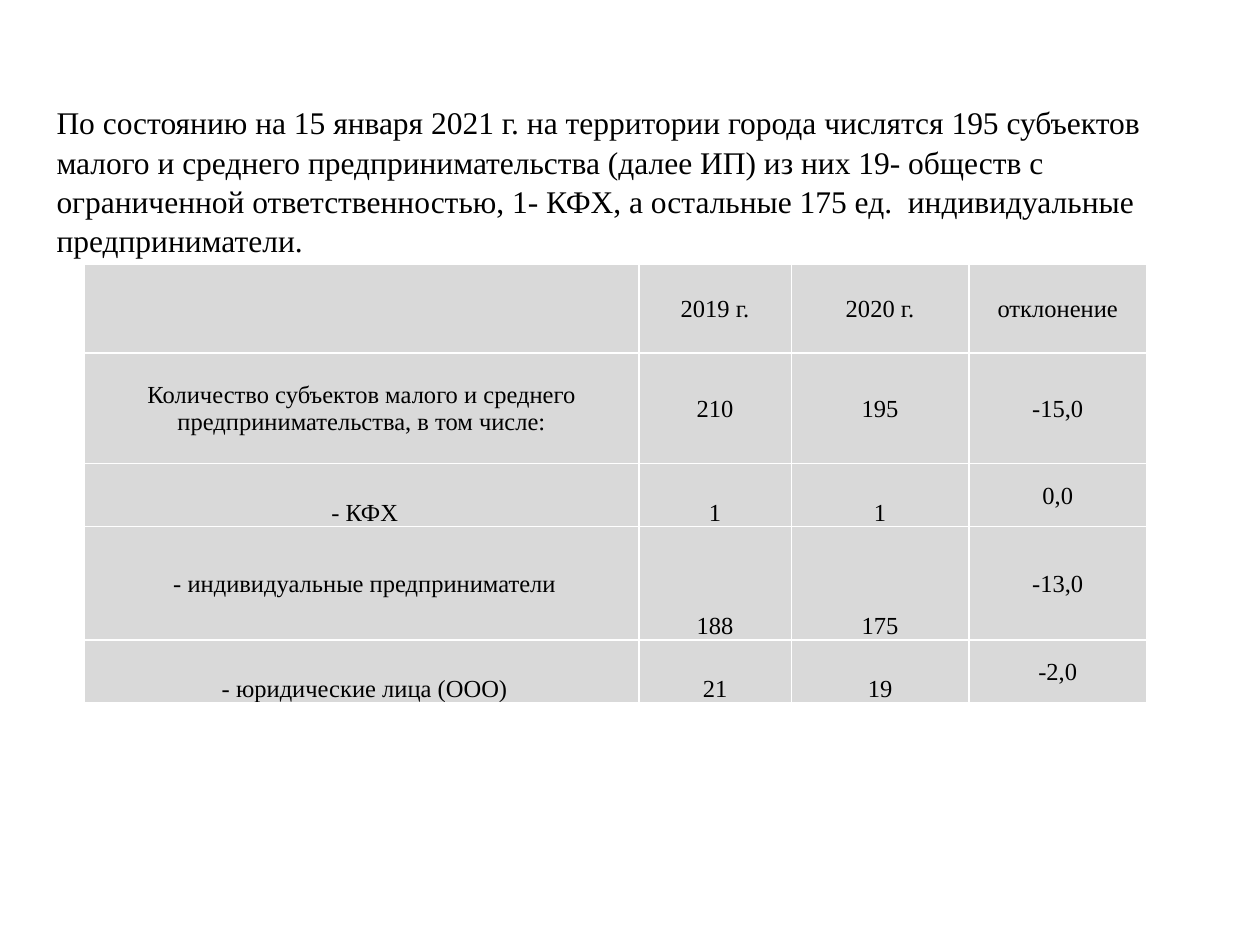
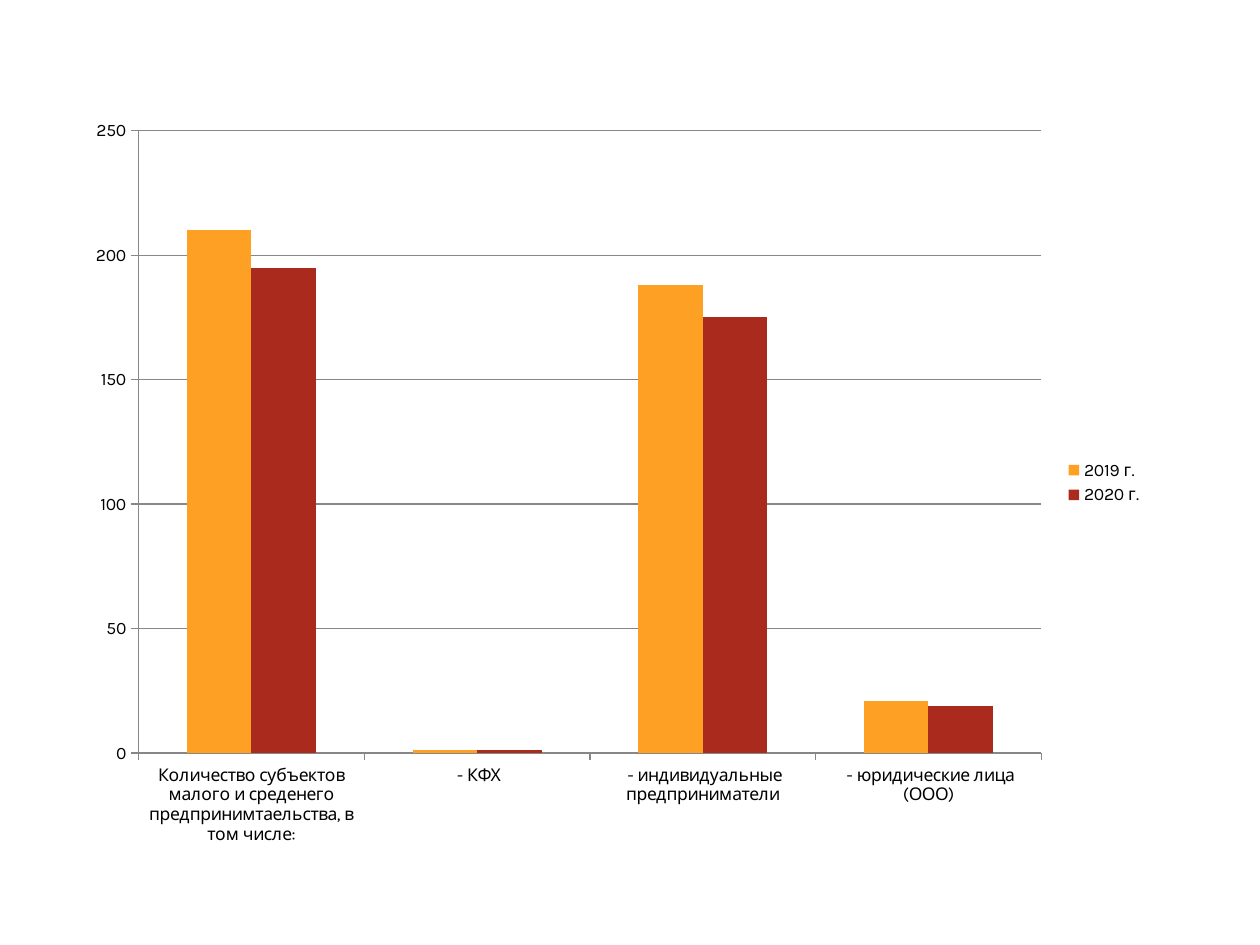
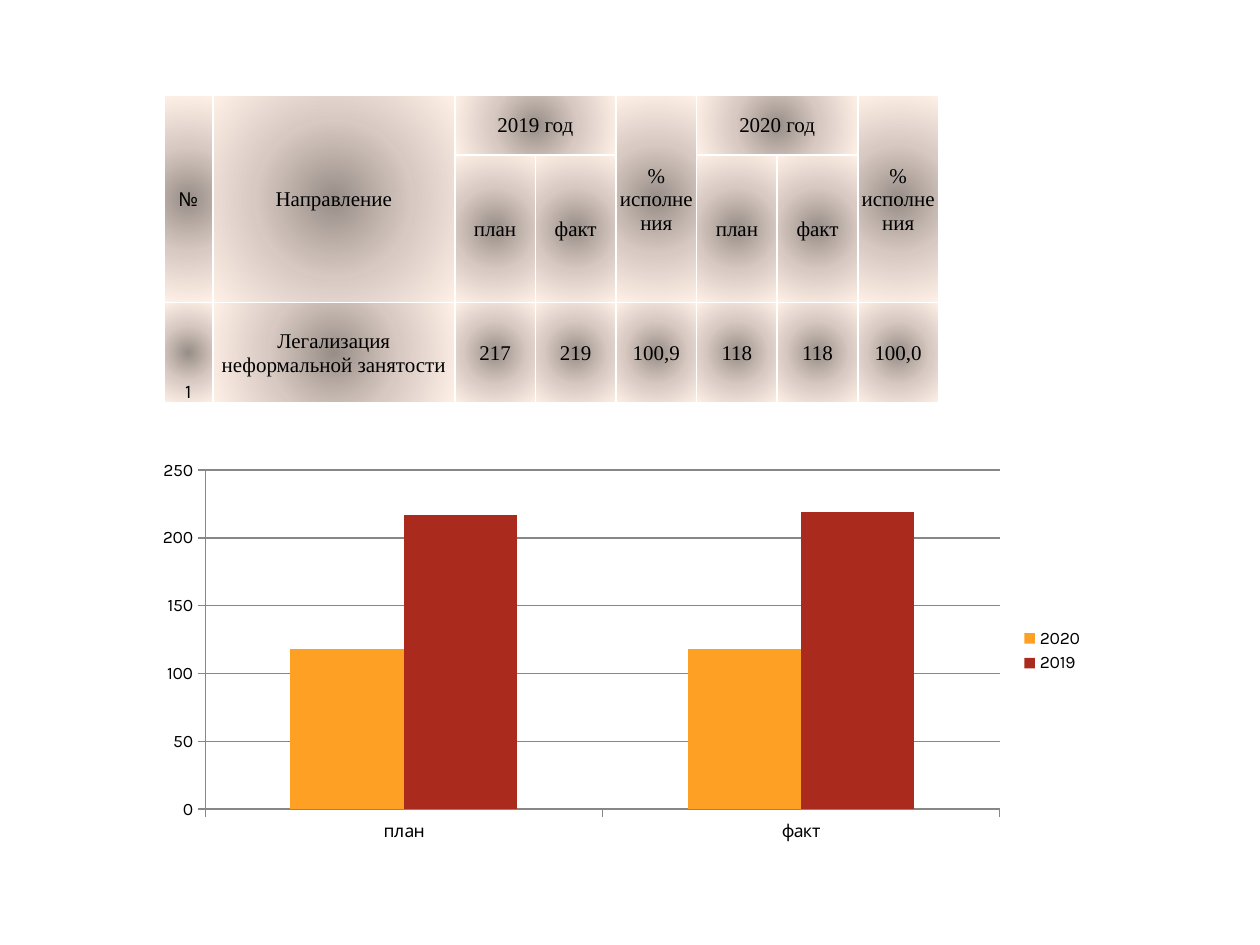
from dataclasses import dataclass
from typing import Callable, NamedTuple, Optional

from lxml import etree
from pptx import Presentation
from pptx.chart.data import CategoryChartData
from pptx.dml.color import RGBColor
from pptx.enum.chart import XL_CHART_TYPE, XL_LEGEND_POSITION, XL_TICK_MARK
from pptx.enum.text import MSO_ANCHOR, PP_ALIGN
from pptx.oxml import parse_xml
from pptx.oxml.ns import nsdecls
from pptx.util import Inches, Pt

COLUMNS = XL_CHART_TYPE.COLUMN_CLUSTERED
LEGEND_RIGHT = XL_LEGEND_POSITION.RIGHT
TICK_OUTSIDE, TICK_NONE = XL_TICK_MARK.OUTSIDE, XL_TICK_MARK.NONE
MIDDLE, BOTTOM = MSO_ANCHOR.MIDDLE, MSO_ANCHOR.BOTTOM
CENTER = PP_ALIGN.CENTER


@dataclass(frozen=True)
class Theme:
    text: RGBColor = RGBColor(0x00, 0x00, 0x00)
    cell: RGBColor = RGBColor(0xD9, 0xD9, 0xD9)
    axis: RGBColor = RGBColor(0x87, 0x87, 0x87)
    series: tuple = (RGBColor(0xFD, 0xA0, 0x23), RGBColor(0xAA, 0x2B, 0x1E))
    border: str = "FFFFFF"
    glow: tuple = ((0, "988E88"), (50, "D8CAC2"), (100, "FFF0E7"))
    serif: str = "Times New Roman"
    sans: str = "Karla"
    intro_size: int = 18
    count_size: int = 14
    plan_size: int = 12
    number_size: int = 11
    chart_size: int = 10


THEME = Theme()


class Box(NamedTuple):
    left: float
    top: float
    width: float
    height: float

    def lengths(self) -> list:
        return [Inches(value) for value in self]


class Cell(NamedTuple):
    text: str
    anchor: MSO_ANCHOR = MIDDLE
    rows: int = 1
    columns: int = 1
    font: str = THEME.serif
    size: Optional[int] = None


@dataclass(frozen=True)
class Grid:
    box: Box
    widths: list
    heights: list
    rows: list
    size: int
    fill: Callable


@dataclass(frozen=True)
class Columns:
    box: Box
    categories: list
    series: dict


def style_font(font, name: str, size: int) -> None:
    formats = {"name": name, "size": Pt(size)}
    for attribute, value in formats.items():
        setattr(font, attribute, value)
    font.color.rgb = THEME.text


def fill_flat(cell) -> None:
    cell.fill.solid()
    cell.fill.fore_color.rgb = THEME.cell


def fill_glow(cell) -> None:
    """Fill with a circular gradient, darkest at the centre."""
    stops = "".join(
        f'<a:gs pos="{position * 1000}"><a:srgbClr val="{color}"/></a:gs>'
        for position, color in THEME.glow
    )
    cell._tc.get_or_add_tcPr().append(parse_xml(
        f'<a:gradFill {nsdecls("a")}><a:gsLst>{stops}</a:gsLst><a:path path="circle">'
        '<a:fillToRect l="50000" t="50000" r="50000" b="50000"/></a:path></a:gradFill>'
    ))


def add_borders(cell) -> None:
    properties = cell._tc.get_or_add_tcPr()
    for side in ("lnL", "lnR", "lnT", "lnB"):
        line = etree.SubElement(properties, f"{{{properties.nsmap['a']}}}{side}", w=str(Pt(1)))
        line.append(parse_xml(
            f'<a:solidFill {nsdecls("a")}><a:srgbClr val="{THEME.border}"/></a:solidFill>'
        ))


def write_cell(cell, content: Cell, default_size: int) -> None:
    formats = {
        "margin_left": Inches(0.01),
        "margin_right": Inches(0.01),
        "margin_top": Inches(0.01),
        "margin_bottom": 0,
        "vertical_anchor": content.anchor,
    }
    for attribute, value in formats.items():
        setattr(cell, attribute, value)
    if content.text:
        paragraph = cell.text_frame.paragraphs[0]
        paragraph.alignment = CENTER
        run = paragraph.add_run()
        run.text = content.text
        style_font(run.font, content.font, content.size or default_size)


def draw_grid(slide, grid: Grid) -> None:
    table = slide.shapes.add_table(
        len(grid.heights), len(grid.widths), *grid.box.lengths()
    ).table
    table.first_row = table.horz_banding = False
    for column, width in zip(table.columns, grid.widths):
        column.width = Inches(width)
    for row, height in zip(table.rows, grid.heights):
        row.height = Inches(height)
    for r, contents in enumerate(grid.rows):
        for c, content in enumerate(contents):
            cell = table.cell(r, c)
            add_borders(cell)
            grid.fill(cell)
            if content is None:
                continue
            write_cell(cell, content, grid.size)
            if content.rows > 1 or content.columns > 1:
                cell.merge(table.cell(r + content.rows - 1, c + content.columns - 1))


def draw_columns(slide, columns: Columns) -> None:
    data = CategoryChartData()
    data.categories = columns.categories
    for name, values in columns.series.items():
        data.add_series(name, values)
    chart = slide.shapes.add_chart(COLUMNS, *columns.box.lengths(), data).chart
    style_font(chart.font, THEME.sans, THEME.chart_size)
    chart.has_title = False
    chart.has_legend = True
    chart.legend.position = LEGEND_RIGHT
    chart.legend.include_in_layout = False
    for axis in (chart.category_axis, chart.value_axis):
        axis.major_tick_mark = TICK_OUTSIDE
        axis.minor_tick_mark = TICK_NONE
        axis.format.line.color.rgb = THEME.axis
    chart.value_axis.has_major_gridlines = True
    chart.value_axis.major_gridlines.format.line.color.rgb = THEME.axis
    plot = chart.plots[0]
    plot.gap_width = 150
    plot.vary_by_categories = False
    for series, color in zip(plot.series, THEME.series):
        series.format.fill.solid()
        series.format.fill.fore_color.rgb = color


def draw_intro(slide, text: str, box: Box) -> None:
    frame = slide.shapes.add_textbox(*box.lengths()).text_frame
    frame.word_wrap = True
    paragraph = frame.paragraphs[0]
    paragraph.line_spacing = 1.04
    run = paragraph.add_run()
    run.text = text
    style_font(run.font, THEME.serif, THEME.intro_size)


INTRO = (
    "По состоянию на 15 января 2021 г. на территории города числятся 195 субъектов "
    "малого и среднего предпринимательства (далее ИП) из них 19- обществ с "
    "ограниченной ответственностью, 1- КФХ, а остальные 175 ед.  индивидуальные "
    "предприниматели."
)

FARMS, SOLE_TRADERS, COMPANIES = (
    " - КФХ", " - индивидуальные предприниматели", " - юридические лица (ООО)"
)


def count_row(label: str, before: str, after: str, change: str,
              label_anchor: MSO_ANCHOR = BOTTOM, count_anchor: MSO_ANCHOR = BOTTOM) -> list:
    return [Cell(label, label_anchor), Cell(before, count_anchor),
            Cell(after, count_anchor), Cell(change)]


BUSINESS_COUNTS = Grid(
    box=Box(0.67, 2.1, 8.43, 3.48),
    widths=[4.4, 1.21, 1.41, 1.41],
    heights=[0.7, 0.88, 0.5, 0.9, 0.5],
    rows=[
        count_row("", "2019 г.", "2020 г.", "отклонение", MIDDLE, MIDDLE),
        count_row("Количество субъектов малого и среднего предпринимательства, в том числе:",
                  "210", "195", "-15,0", MIDDLE, MIDDLE),
        count_row(FARMS, "1", "1", "0,0"),
        count_row(SOLE_TRADERS, "188", "175", "-13,0", MIDDLE),
        count_row(COMPANIES, "21", "19", "-2,0"),
    ],
    size=THEME.count_size,
    fill=fill_flat,
)

BUSINESS_CHART = Columns(
    box=Box(0.59, 0.84, 8.58, 5.98),
    categories=["Количество субъектов малого и среденего предпринимтаельства, в том числе:",
                FARMS, SOLE_TRADERS, COMPANIES],
    series={"2019 г.": (210, 1, 188, 21), "2020 г.": (195, 1, 175, 19)},
)


def year_heading(year: str) -> list:
    return [Cell(year, columns=2), None, Cell("% исполнения", rows=2)]


PLAN_AND_FACT = [Cell("план"), Cell("факт"), None]
NUMBER_STYLE = {"font": THEME.sans, "size": THEME.number_size}

LEGALIZATION_PLAN = Grid(
    box=Box(1.3, 0.76, 6.15, 2.44),
    widths=[0.39, 1.92] + [0.64] * 6,
    heights=[0.47, 1.17, 0.8],
    rows=[
        [Cell("№", rows=2, **NUMBER_STYLE), Cell("Направление", rows=2),
         *year_heading("2019 год"), *year_heading("2020 год")],
        [None, None, *PLAN_AND_FACT, *PLAN_AND_FACT],
        [Cell("1", BOTTOM, **NUMBER_STYLE), Cell("Легализация неформальной занятости"),
         *map(Cell, ("217", "219", "100,9", "118", "118", "100,0"))],
    ],
    size=THEME.plan_size,
    fill=fill_glow,
)

LEGALIZATION_CHART = Columns(
    box=Box(1.14, 3.59, 7.56, 3.15),
    categories=["план", "факт"],
    series={"2020": (118, 118), "2019": (217, 219)},
)


def main() -> None:
    deck = Presentation()
    deck.slide_width, deck.slide_height = Inches(10), Inches(7.5)
    blank = deck.slide_layouts[6]
    counts, dynamics, legalization = (deck.slides.add_slide(blank) for _ in range(3))

    draw_intro(counts, INTRO, Box(0.35, 0.76, 9.29, 7.98))
    draw_grid(counts, BUSINESS_COUNTS)
    draw_columns(dynamics, BUSINESS_CHART)
    draw_grid(legalization, LEGALIZATION_PLAN)
    draw_columns(legalization, LEGALIZATION_CHART)

    deck.save("out.pptx")


if __name__ == "__main__":
    main()
